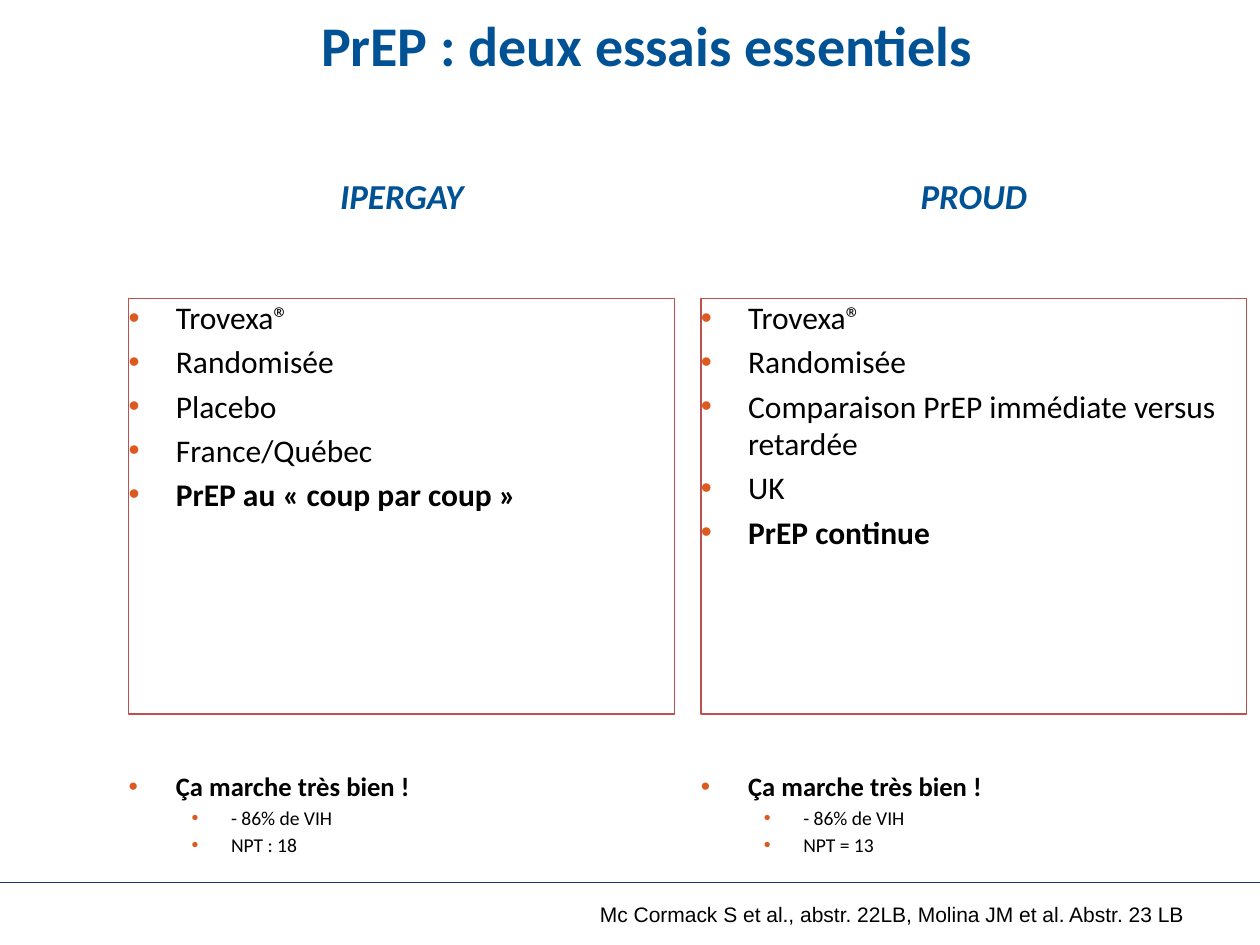
from lxml.etree import SubElement
from pptx import Presentation
from pptx.dml.color import RGBColor
from pptx.enum.shapes import MSO_CONNECTOR, MSO_SHAPE
from pptx.enum.text import MSO_ANCHOR, PP_ALIGN
from pptx.oxml.ns import qn
from pptx.util import Pt

COLORS = {
    "heading": "005294",
    "text": "000000",
    "bullet": "DC5A20",
    "frame": "C0504D",
    "rule": "17375E",
}
COLUMN_LEFT, COLUMN_STEP, COLUMN_WIDTH = 73.5, 327, 312
TRIALS = [
    ("IPERGAY",
     ["Trovexa®", "Randomisée", "Placebo", "France/Québec",
      "PrEP au «\u00a0coup par coup\u00a0»"],
     ["Ça marche très bien !", "- 86% de VIH", "NPT : 18"]),
    ("PROUD",
     ["Trovexa®", "Randomisée", "Comparaison PrEP immédiate versus retardée",
      "UK", "PrEP continue"],
     ["Ça marche très bien !", "- 86% de VIH", "NPT = 13"]),
]


def color(name):
    return RGBColor.from_string(COLORS[name])


def prepare_frame(frame, anchor=MSO_ANCHOR.TOP, side=0, edge=0):
    frame.word_wrap = True
    frame.vertical_anchor = anchor
    frame.margin_left = frame.margin_right = Pt(side)
    frame.margin_top = frame.margin_bottom = Pt(edge)
    return frame


def style_paragraph(paragraph, size, ink="text", font="Calibri", bold=False,
                    italic=False, align=PP_ALIGN.LEFT):
    paragraph.alignment = align
    for run in paragraph.runs:
        run.font.name = font
        run.font.size = Pt(size)
        run.font.bold = bold
        run.font.italic = italic
        run.font.color.rgb = color(ink)


def add_bullet(paragraph, size, indent, hanging):
    """Give the paragraph an orange bullet, a hanging indent and 20% space before."""
    paragraph.space_before = Pt(round(size * 0.2, 1))
    properties = paragraph._p.get_or_add_pPr()
    properties.set("marL", str(Pt(indent)))
    properties.set("indent", str(-Pt(hanging)))
    bullet_color = SubElement(properties, qn("a:buClr"))
    SubElement(bullet_color, qn("a:srgbClr"), val=COLORS["bullet"])
    SubElement(properties, qn("a:buFont"), typeface="Arial")
    SubElement(properties, qn("a:buChar"), char="•")


def add_line_of_text(slide, box, text, anchor=MSO_ANCHOR.TOP, side=0, edge=0,
                     **style):
    textbox = slide.shapes.add_textbox(*map(Pt, box))
    frame = prepare_frame(textbox.text_frame, anchor, side, edge)
    frame.text = text
    style_paragraph(frame.paragraphs[0], **style)
    return frame.paragraphs[0]


def add_design_box(slide, left, features):
    """Framed list of the trial's features, the last one in bold."""
    box = slide.shapes.add_shape(
        MSO_SHAPE.RECTANGLE, Pt(left), Pt(170.5), Pt(COLUMN_WIDTH), Pt(237.5))
    box.shadow.inherit = False
    box.fill.background()
    box.line.color.rgb = color("frame")
    box.line.width = Pt(0.75)
    frame = prepare_frame(box.text_frame)
    frame.text = "\n".join(features)
    for paragraph in frame.paragraphs:
        style_paragraph(paragraph, 18)
        add_bullet(paragraph, 18, 27, 27)
    style_paragraph(frame.paragraphs[-1], 18, bold=True)


def add_results(slide, left, results):
    """Bold conclusion followed by its figures one level down."""
    textbox = slide.shapes.add_textbox(
        Pt(left), Pt(440), Pt(COLUMN_WIDTH), Pt(42))
    frame = prepare_frame(textbox.text_frame)
    frame.text = "\n".join(results)
    conclusion, *figures = frame.paragraphs
    style_paragraph(conclusion, 15.2, bold=True)
    add_bullet(conclusion, 15.2, 27, 27)
    for figure in figures:
        figure.level = 1
        style_paragraph(figure, 11.2)
        add_bullet(figure, 11.2, 58.5, 22.5)


def add_footer_rule(slide):
    rule = slide.shapes.add_connector(
        MSO_CONNECTOR.STRAIGHT, Pt(0), Pt(504), Pt(721.5), Pt(504))
    rule.line.color.rgb = color("rule")
    rule.line.width = Pt(0.25)
    SubElement(rule._element.spPr, qn("a:effectLst"))


def main():
    presentation = Presentation()
    presentation.slide_width, presentation.slide_height = Pt(720), Pt(540)
    slide = presentation.slides.add_slide(presentation.slide_layouts[6])

    add_footer_rule(slide)
    title = add_line_of_text(
        slide, (COLUMN_LEFT, 9.5, 592.5, 47.5), "PrEP : deux essais essentiels",
        anchor=MSO_ANCHOR.MIDDLE, size=32, ink="heading", bold=True,
        align=PP_ALIGN.CENTER)
    title.line_spacing = Pt(22)

    for column, (name, features, results) in enumerate(TRIALS):
        left = COLUMN_LEFT + column * COLUMN_STEP
        add_line_of_text(
            slide, (left, 100, COLUMN_WIDTH, 50), name, size=20, ink="heading",
            bold=True, italic=True, align=PP_ALIGN.CENTER)
        add_design_box(slide, left, features)
        add_results(slide, left, results)

    add_line_of_text(
        slide, (218, 504, 466, 36.5),
        "Mc Cormack S et al., abstr. 22LB, Molina JM et al. Abstr. 23 LB",
        anchor=MSO_ANCHOR.MIDDLE, side=7.2, edge=3.6, size=12, font="Arial",
        align=PP_ALIGN.RIGHT)
    presentation.save("out.pptx")


if __name__ == "__main__":
    main()
